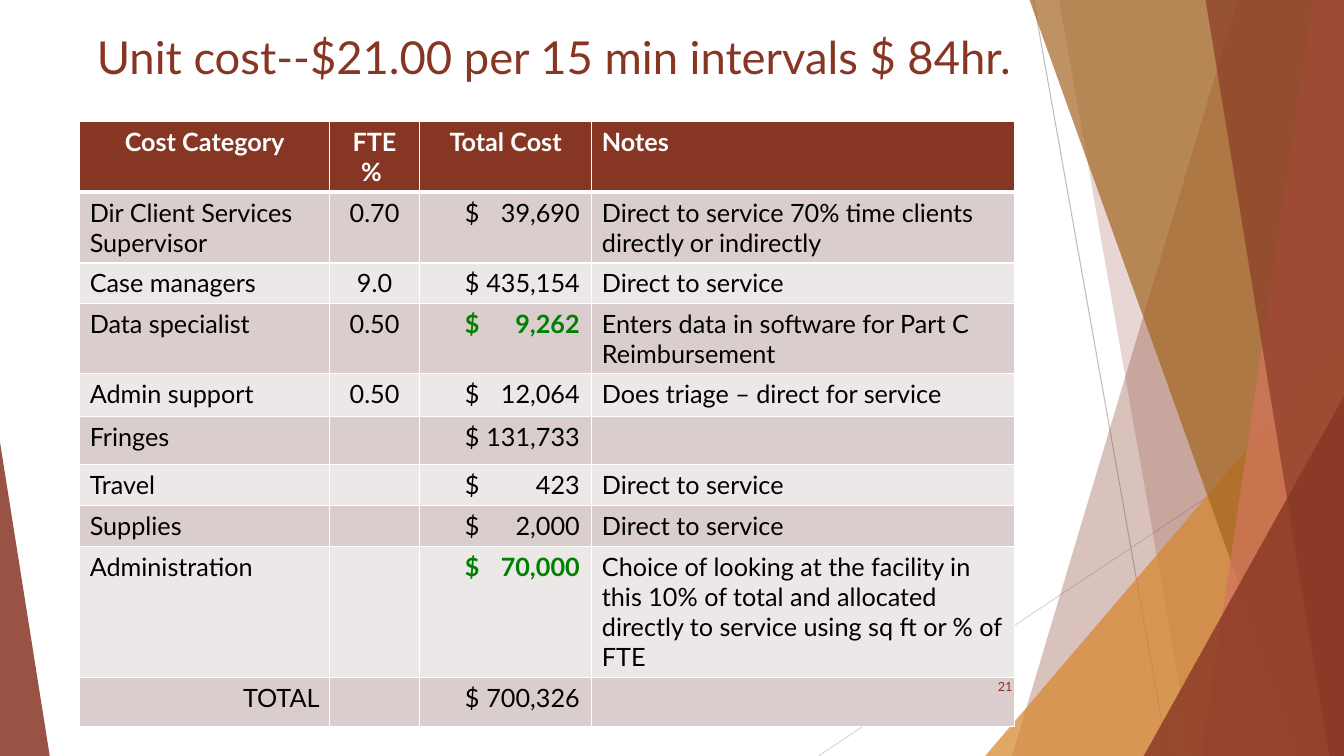
import lxml.etree
import pptx
import pptx.dml.color
import pptx.enum.shapes
import pptx.enum.text
import pptx.oxml.ns
import pptx.util

RGBColor = pptx.dml.color.RGBColor
Align = pptx.enum.text.PP_ALIGN
Anchor = pptx.enum.text.MSO_ANCHOR
qn = pptx.oxml.ns.qn

RUST = RGBColor(0x87, 0x36, 0x24)
ORANGE = RGBColor(0xD6, 0x86, 0x2D)
BROWN = RGBColor(0xA3, 0x65, 0x20)
CORAL = RGBColor(0xD4, 0x74, 0x5E)
GREEN = RGBColor(0x00, 0x80, 0x00)
BLACK = RGBColor(0x00, 0x00, 0x00)
WHITE = RGBColor(0xFF, 0xFF, 0xFF)
GREY = RGBColor(0xBF, 0xBF, 0xBF)
PALE_GREY = RGBColor(0xD9, 0xD9, 0xD9)
BANDS = (RGBColor(0xED, 0xE8, 0xE8), RGBColor(0xD9, 0xCE, 0xCD))

HEADER = ("Cost Category", "FTE % ", "Total Cost", "Notes")
COSTS = (
    ("Dir Client Services Supervisor", "0.70", "39,690",
     "Direct to service 70% time clients directly or indirectly"),
    ("Case managers", "9.0", "435,154", "Direct to service"),
    ("Data specialist", "0.50", "9,262",
     "Enters data in software for Part C Reimbursement"),
    ("Admin support", "0.50", "12,064", "Does triage – direct for service"),
    ("Fringes", "", "131,733", ""),
    ("Travel", "", "423", "Direct to service"),
    ("Supplies", "", "2,000", "Direct to service"),
    ("Administration", "", "70,000",
     "Choice of looking at the facility in this 10% of total and allocated "
     "directly to service using sq ft or % of FTE"),
    ("TOTAL", "", "700,326", ""),
)
HIGHLIGHTED = ("Data specialist", "Administration")
COLUMN_WIDTHS = (18.6, 6.68, 12.83, 31.43)
ROW_HEIGHTS = (7.47, 9.33, 5.33, 9.2, 5.6, 6.4, 5.2, 5.33, 15.6, 6.53)


class CostSlide:
    """Lengths are percentages of the slide's width and height."""

    font_name = "Lato"
    body_size = 18

    def __init__(self, deck):
        self.deck = deck
        self.slide = deck.slides.add_slide(deck.slide_layouts[5])
        self.shapes = self.slide.shapes

    def across(self, share):
        return round(self.deck.slide_width * share / 100)

    def down(self, share):
        return round(self.deck.slide_height * share / 100)

    def frame(self, left, top, width, height):
        return (self.across(left), self.down(top),
                self.across(width), self.down(height))

    def add_run(self, para, text, size, color, bold=False):
        span = para.add_run()
        span.text = text
        span.font.name = self.font_name
        span.font.size = pptx.util.Pt(size)
        span.font.bold = bold
        span.font.color.rgb = color

    def add_line(self, start, end, color):
        line = self.shapes.add_connector(
            pptx.enum.shapes.MSO_CONNECTOR.STRAIGHT,
            self.across(start[0]), self.down(start[1]),
            self.across(end[0]), self.down(end[1]))
        line.line.color.rgb = color
        line.line.width = pptx.util.Pt(0.75)
        lxml.etree.SubElement(line._element.spPr, qn("a:effectLst"))

    def paint(self, shape, color, opacity):
        shape.shadow.inherit = False
        shape.line.fill.background()
        shape.fill.solid()
        shape.fill.fore_color.rgb = color
        tint = shape._element.spPr.find(qn("a:solidFill"))[0]
        alpha = lxml.etree.SubElement(tint, qn("a:alpha"))
        alpha.set("val", str(opacity * 1000))

    def add_shard(self, top_left, bottom_left, color, opacity):
        """Draw a full-height panel that reaches the slide's right edge."""
        outline = self.shapes.build_freeform(self.across(top_left), 0)
        corners = ((100, 0), (100, 100), (bottom_left, 100))
        outline.add_line_segments(
            [(self.across(x), self.down(y)) for x, y in corners])
        self.paint(outline.convert_to_shape(), color, opacity)

    def add_triangle(self, left, top, width, apex, color, opacity):
        """Draw a triangle on the bottom edge; apex is 0 (left) to 1 (right)."""
        triangle = self.shapes.add_shape(
            pptx.enum.shapes.MSO_SHAPE.ISOSCELES_TRIANGLE,
            *self.frame(left, top, width, 100 - top))
        triangle.adjustments[0] = apex
        self.paint(triangle, color, opacity)

    def add_title(self, text, *place):
        title = self.shapes.title
        title.left, title.top, title.width, title.height = self.frame(*place)
        title.text_frame.vertical_anchor = Anchor.TOP
        para = title.text_frame.paragraphs[0]
        para.alignment = Align.LEFT
        self.add_run(para, text, 32.4, RUST)

    def add_page_number(self, text, *place):
        box = self.shapes.add_textbox(*self.frame(*place))
        box.text_frame.word_wrap = True
        box.text_frame.vertical_anchor = Anchor.MIDDLE
        para = box.text_frame.paragraphs[0]
        para.alignment = Align.RIGHT
        self.add_run(para, text, 9, RUST)

    def style_cell(self, cell, fill, top=1, bottom=1):
        """Set white borders, with top and bottom widths in points, and a fill."""
        properties = cell._tc.get_or_add_tcPr()
        for side, width in (("L", 1), ("R", 1), ("T", top), ("B", bottom)):
            border = lxml.etree.SubElement(properties, qn("a:ln" + side))
            border.set("w", str(pptx.util.Pt(width)))
            paint = lxml.etree.SubElement(border, qn("a:solidFill"))
            lxml.etree.SubElement(paint, qn("a:srgbClr")).set("val", str(WHITE))
        cell.fill.solid()
        cell.fill.fore_color.rgb = fill

    def fill_cell(self, cell, text, align, color=BLACK, bold=False):
        para = cell.text_frame.paragraphs[0]
        para.alignment = align
        if text:
            self.add_run(para, text, self.body_size, color, bold)

    def fill_amount(self, cell, amount, highlighted):
        """Set the dollar sign left and the figure on a right-hand tab stop."""
        cell.margin_left = pptx.util.Inches(0.45)
        para = cell.text_frame.paragraphs[0]
        stops = lxml.etree.SubElement(para._p.get_or_add_pPr(), qn("a:tabLst"))
        stop = lxml.etree.SubElement(stops, qn("a:tab"))
        stop.set("pos", str(pptx.util.Inches(1.14)))
        stop.set("algn", "r")
        self.fill_cell(cell, "$\t" + amount, Align.LEFT,
                       GREEN if highlighted else BLACK, highlighted)

    def add_cost_table(self, left, top):
        table = self.shapes.add_table(
            len(ROW_HEIGHTS), len(COLUMN_WIDTHS),
            *self.frame(left, top, sum(COLUMN_WIDTHS), sum(ROW_HEIGHTS))).table
        for column, width in zip(table.columns, COLUMN_WIDTHS):
            column.width = self.across(width)
        for row, height in zip(table.rows, ROW_HEIGHTS):
            row.height = self.down(height)

        for index, heading in enumerate(HEADER):
            cell = table.cell(0, index)
            self.style_cell(cell, RUST, bottom=3)
            align = Align.LEFT if heading == "Notes" else Align.CENTER
            self.fill_cell(cell, heading, align, WHITE, True)

        for number, (category, share, amount, note) in enumerate(COSTS, 1):
            cells = [table.cell(number, index) for index in range(len(HEADER))]
            for cell in cells:
                self.style_cell(cell, BANDS[number % 2],
                                top=3 if number == 1 else 1)
            self.fill_cell(cells[0], category,
                           Align.RIGHT if category == "TOTAL" else Align.LEFT)
            self.fill_cell(cells[1], share, Align.CENTER)
            self.fill_amount(cells[2], amount, category in HIGHLIGHTED)
            self.fill_cell(cells[3], note, Align.LEFT)


def main():
    deck = pptx.Presentation()
    deck.slide_width = pptx.util.Inches(13.33)
    deck.slide_height = pptx.util.Inches(7.5)
    page = CostSlide(deck)

    page.add_line((76.9, 0), (86.9, 100), GREY)
    page.add_line((100, 53.7), (60.9, 100), PALE_GREY)
    page.add_shard(92.1, 75.3, RUST, 30)
    page.add_shard(78.8, 88.7, RUST, 20)
    page.add_triangle(73.3, 44.4, 26.7, 1, ORANGE, 72)
    page.add_shard(76.6, 96.8, BROWN, 70)
    page.add_shard(97.7, 89.4, CORAL, 70)
    page.add_shard(89.7, 98.9, RUST, 65)
    page.add_triangle(85.1, 52.4, 14.9, 1, RUST, 80)
    page.add_triangle(0, 58.5, 3.7, 0, RUST, 85)

    page.add_title("Unit cost--$21.00 per 15 min intervals $ 84hr.",
                   6.45, 3.2, 70.5, 13.07)
    page.add_cost_table(5.93, 16.1)
    page.add_page_number("21", 70.44, 88.13, 5.63, 5.33)
    deck.save("out.pptx")


if __name__ == "__main__":
    main()
